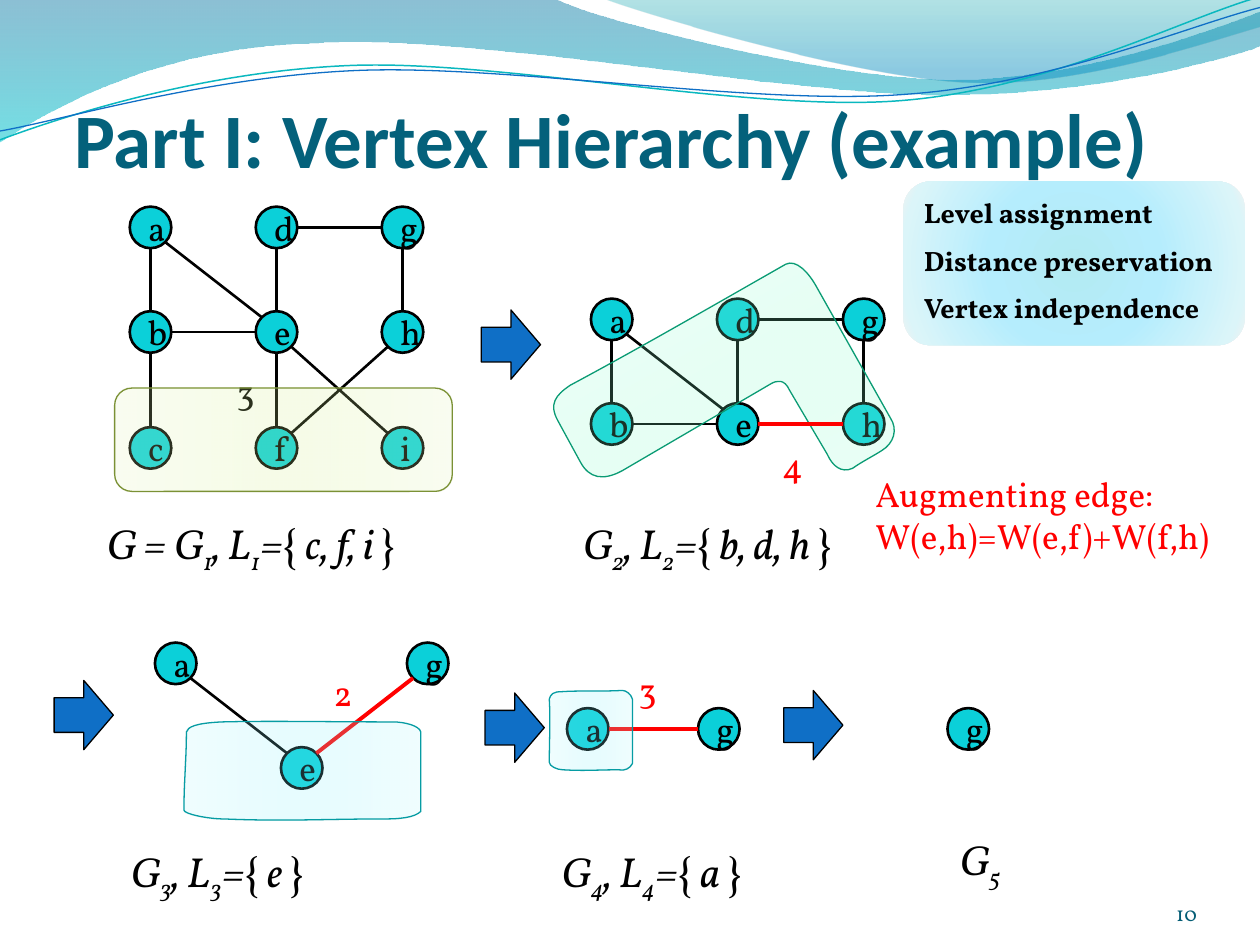
"""Build the vertex hierarchy example slide."""
import math

import pptx
import pptx.dml.color
import pptx.enum.shapes
import pptx.enum.text
import pptx.oxml
import pptx.oxml.ns
import pptx.util

Inches, Pt, qn = pptx.util.Inches, pptx.util.Pt, pptx.oxml.ns.qn
SHAPE = pptx.enum.shapes.MSO_SHAPE
ALIGN = pptx.enum.text.PP_ALIGN
ANCHOR = pptx.enum.text.MSO_ANCHOR

COLORS = {
    "title": "04617B", "number": "045D75", "node": "0BD0D9", "ink": "000000",
    "augmented": "FF0000", "arrow": "0F6FC6", "wave": "0AB8BF",
    "olive": "7B9135", "green": "0A9B74", "aqua": "069CA3",
}
BAND_TINTS = {
    "olive": ("E2F5BA", "D7F399", "D3F28E"),
    "green": ("B2FEDB", "8EFFCD", "82FFC9"),
    "aqua": ("B5F9FF", "93F7FF", "87F6FF"),
}
LEGEND_STOPS = [(0, "B3EAF2", 100), (45, "B5EDFD", 100), (91, "DBF5F9", 100), (100, "F2F2F2", 100)]
RADIUS = 0.165

WAVE_BACK = [(0, 0), (4.4, -0.01), (4.76, 0.17, 6.64, 0.63, 7.58, 0.63),
             (8.53, 0.63, 9.58, 0.26, 10, 0.09), (10.01, 0.36),
             (9.83, 0.44, 8.7, 0.76, 7.46, 0.75), (6.22, 0.75, 3.82, 0.28, 2.57, 0.34),
             (1.29, 0.36, 0.46, 0.83, -0.01, 1.13), (0, 0)]
WAVE_FRONT = [(4.79, -0.01), (5.09, 0.11, 6.82, 0.62, 7.69, 0.65),
              (8.56, 0.69, 9.61, 0.32, 10, 0.21), (10, 0), (4.79, -0.01)]
STRAND_UPPER = [(0, 1.11), (0.48, 0.93, 1.58, 0.57, 2.77, 0.52),
                (3.95, 0.47, 5.93, 0.89, 7.13, 0.8), (8.33, 0.71, 9.38, 0.15, 9.98, -0.02)]
STRAND_LOWER = [(0, 1.04), (0.47, 0.96, 1.64, 0.61, 2.83, 0.56),
                (4.03, 0.51, 5.97, 0.84, 7.17, 0.75), (8.36, 0.67, 9.41, 0.21, 10, 0.06)]
BAND_L2 = [(4.53, 3.06), (4.41, 3.14, 4.36, 3.21, 4.43, 3.34), (4.61, 3.67),
           (4.68, 3.8, 4.79, 3.82, 4.94, 3.74), (6.12, 3.05),
           (6.17, 3.02, 6.23, 3.01, 6.27, 3.1), (6.57, 3.61),
           (6.61, 3.7, 6.68, 3.76, 6.77, 3.72), (6.84, 3.67, 6.92, 3.63, 7, 3.58),
           (7.1, 3.52, 7.13, 3.41, 7.07, 3.32), (6.49, 2.29),
           (6.42, 2.16, 6.32, 2.06, 6.24, 2.1), (5.66, 2.43, 5.09, 2.76, 4.53, 3.06)]
BAND_L3 = [(1.48, 5.81), (1.48, 6.02, 1.46, 6.21, 1.46, 6.43),
           (1.46, 6.46, 1.65, 6.5, 1.78, 6.5), (2.27, 6.52, 2.56, 6.5, 3.05, 6.5),
           (3.17, 6.5, 3.29, 6.49, 3.34, 6.44), (3.34, 6.23, 3.34, 6.02, 3.34, 5.81),
           (3.33, 5.76, 3.21, 5.73, 3.12, 5.73), (2.61, 5.73, 2.15, 5.72, 1.76, 5.73),
           (1.55, 5.74, 1.49, 5.77, 1.48, 5.81)]
BAND_L4 = [(4.36, 5.55), (4.37, 5.72, 4.36, 5.88, 4.36, 6.05),
           (4.36, 6.08, 4.42, 6.11, 4.47, 6.11), (4.64, 6.12, 4.74, 6.11, 4.91, 6.11),
           (4.96, 6.12, 5, 6.1, 5.02, 6.06), (5.02, 5.89, 5.02, 5.72, 5.02, 5.55),
           (5.01, 5.51, 4.97, 5.48, 4.94, 5.48), (4.76, 5.49, 4.6, 5.48, 4.46, 5.49),
           (4.39, 5.49, 4.37, 5.51, 4.36, 5.55)]


def rgb(name):
    return pptx.dml.color.RGBColor.from_string(COLORS[name])


def xml(tag, body=""):
    return pptx.oxml.parse_xml(f"<a:{tag} {pptx.oxml.ns.nsdecls('a')}>{body}</a:{tag}>")


def set_fill(shape, color):
    shape.fill.solid()
    shape.fill.fore_color.rgb = rgb(color)


def set_line(shape, color, width):
    shape.line.color.rgb = rgb(color)
    shape.line.width = Pt(width)


def set_gradient(shape, stops, angle=None):
    marks = "".join(f'<a:gs pos="{at * 1000}"><a:srgbClr val="{color}">'
                    f'<a:alpha val="{opacity * 1000}"/></a:srgbClr></a:gs>'
                    for at, color, opacity in stops)
    way = (f'<a:lin ang="{angle * 60000}" scaled="0"/>' if angle is not None else
           '<a:path path="circle"><a:fillToRect l="50000" t="50000" r="50000" b="50000"/></a:path>')
    shape.fill.background()
    properties = shape._element.spPr
    blank = properties.find(qn("a:noFill"))
    properties.replace(blank, xml("gradFill", f"<a:gsLst>{marks}</a:gsLst>{way}"))


def style_band(shape, color):
    edge_tint, mid_tint, core_tint = BAND_TINTS[color]
    tints = (edge_tint, mid_tint, core_tint, core_tint, mid_tint, edge_tint)
    set_gradient(shape, [(at, c, 20) for at, c in zip((0, 30, 45, 55, 73, 100), tints)], 0)
    set_line(shape, color, 0.75)


def bend(outline, segments):
    corners = iter(list(outline._element.iter(qn("a:lnTo"))))
    for segment in segments[1:]:
        stretch = [next(corners) for _ in range(len(segment) // 2)]
        if len(stretch) == 3:
            curve = xml("cubicBezTo")
            stretch[0].addprevious(curve)
            for corner in stretch:
                curve.append(corner[0])
                corner.getparent().remove(corner)


def add_outline(slide, segments, closed=True, turn=0, pivot=(0, 0)):
    spin = math.radians(-turn)
    points = []
    for segment in segments:
        for x, y in zip(segment[::2], segment[1::2]):
            dx, dy = x - pivot[0], y - pivot[1]
            points.append((Inches(pivot[0] + dx * math.cos(spin) - dy * math.sin(spin)),
                           Inches(pivot[1] + dx * math.sin(spin) + dy * math.cos(spin))))
    builder = slide.shapes.build_freeform(*points[0])
    builder.add_line_segments(points[1:], close=closed)
    outline = builder.convert_to_shape()
    bend(outline, segments)
    outline.rotation = turn
    outline.shadow.inherit = False
    outline.fill.background()
    outline.line.fill.background()
    return outline


def add_shape(slide, kind, *box):
    shape = slide.shapes.add_shape(kind, *map(Inches, box))
    shape.shadow.inherit = False
    return shape


def style_paragraph(paragraph, size, color="ink", font="Vollkorn", align=ALIGN.LEFT):
    paragraph.alignment = align
    paragraph.font.size = Pt(size)
    paragraph.font.name = font
    paragraph.font.color.rgb = rgb(color)


def add_text(slide, lines, box, size, color="ink", font="Vollkorn", align=ALIGN.LEFT):
    frame = slide.shapes.add_textbox(*map(Inches, box)).text_frame
    frame.word_wrap = True
    frame.text = lines
    for paragraph in frame.paragraphs:
        style_paragraph(paragraph, size, color, font, align)
    return frame


def add_caption(slide, level, members, box, lead="G"):
    paragraph = add_text(slide, "", box, 24).paragraphs[0]
    pieces = [(lead, True, False), (level, True, True)]
    if members:
        pieces += [(", L", True, False), (level, True, True), ("=", True, False),
                   ("{ ", False, False), (members + " ", True, False), ("}", False, False)]
    for text, italic, lowered in pieces:
        run = paragraph.add_run()
        run.text = text
        run.font.italic = italic
        if lowered:
            run.font._element.set("baseline", "-25000")


def add_edge(slide, start, end, color="ink", width=1.5):
    eighth = math.pi / 4
    angle = round(math.atan2(end[1] - start[1], end[0] - start[0]) / eighth) * eighth
    dx, dy = RADIUS * math.cos(angle), RADIUS * math.sin(angle)
    ends = (start[0] + RADIUS + dx, start[1] + RADIUS + dy,
            end[0] + RADIUS - dx, end[1] + RADIUS - dy)
    edge = slide.shapes.add_connector(pptx.enum.shapes.MSO_CONNECTOR.STRAIGHT, *map(Inches, ends))
    set_line(edge, color, width)
    edge._element.spPr.append(xml("effectLst"))


def add_graph(slide, vertices, edges=""):
    for name, corner in vertices.items():
        vertex = add_shape(slide, SHAPE.OVAL, *corner, 2 * RADIUS, 2 * RADIUS)
        set_fill(vertex, "node")
        set_line(vertex, "ink", 1.5)
        vertex.text_frame.text = name
        vertex.text_frame.vertical_anchor = ANCHOR.MIDDLE
        style_paragraph(vertex.text_frame.paragraphs[0], 20, align=ALIGN.CENTER)
    for start, end in edges.split():
        add_edge(slide, vertices[start], vertices[end])


def add_arrow(slide, left, top):
    arrow = add_shape(slide, SHAPE.DOWN_ARROW, left, top, 0.55, 0.47)
    arrow.rotation = 270
    set_fill(arrow, "arrow")
    set_line(arrow, "ink", 0.75)


def add_backdrop(slide):
    set_gradient(add_outline(slide, WAVE_BACK), [(0, "0074A1", 45), (100, "00C6CF", 55)], 90)
    set_gradient(add_outline(slide, WAVE_FRONT), [(0, "00A1A9", 30), (80, "008BBF", 45)], 90)
    set_line(add_outline(slide, STRAND_UPPER, False, 357.3, (4.99, 0.58)), "wave", 0.85)
    set_line(add_outline(slide, STRAND_LOWER, False, 357.3, (5, 0.59)), "arrow", 0.75)


def add_legend(slide):
    legend = add_shape(slide, SHAPE.ROUNDED_RECTANGLE, 7.17, 1.44, 2.71, 1.3)
    set_gradient(legend, LEGEND_STOPS)
    legend.line.fill.background()
    legend.text_frame.vertical_anchor = ANCHOR.TOP
    legend.text_frame.text = "Level assignment\nDistance preservation\nVertex independence"
    for paragraph in legend.text_frame.paragraphs:
        style_paragraph(paragraph, 16, align=ALIGN.JUSTIFY)
        paragraph.font.bold = True
        paragraph.space_before = Pt(8)


def main():
    deck = pptx.Presentation()
    deck.slide_width, deck.slide_height = Inches(10), Inches(7.5)
    slide = deck.slides.add_slide(deck.slide_layouts[6])
    add_backdrop(slide)
    title = add_text(slide, "Part I: Vertex Hierarchy (example)", (0.59, 0.21, 9, 1.25),
                     44, "title", "Calibri")
    title.paragraphs[0].font.bold = True
    title.vertical_anchor = ANCHOR.BOTTOM
    title.margin_left = title.margin_right = title.margin_bottom = 0

    first = {name: (1.03 + i // 3, (1.64, 2.47, 3.39)[i % 3]) for i, name in enumerate("abcdefghi")}
    add_graph(slide, first, "ab bc de ef gd ei gh hf ea eb")
    add_text(slide, "3", (1.78, 2.89, 0.3, 0.44), 20)
    style_band(add_shape(slide, SHAPE.ROUNDED_RECTANGLE, 0.91, 3.08, 2.68, 0.82), "olive")
    add_caption(slide, "1", "c, f, i", (0.75, 4.06, 2.83, 0.5), "G = G")

    add_arrow(slide, 3.78, 2.5)
    second = {name: (4.69 + i // 2, (2.37, 3.2)[i % 2]) for i, name in enumerate("abdegh")}
    add_graph(slide, second, "ab de gd gh ea eb")
    style_band(add_outline(slide, BAND_L2, True, 240.3, (5.75, 3.33)), "green")
    add_caption(slide, "2", "b, d, h", (4.53, 4.06, 2.83, 0.5))

    add_arrow(slide, 0.39, 5.44)
    third = {"a": (1.23, 5.1), "e": (2.23, 5.93), "g": (3.23, 5.1)}
    add_graph(slide, third, "ea")
    add_text(slide, "2", (2.55, 5.28, 0.48, 0.44), 20, "augmented")
    add_edge(slide, third["g"], third["e"], "augmented", 2.25)
    add_text(slide, "4", (6.11, 3.47, 0.48, 0.44), 20, "augmented")
    add_edge(slide, second["h"], second["e"], "augmented", 2.25)
    add_text(slide, "Augmenting edge:\nW(e,h)=W(e,f)+W(f,h)", (6.85, 3.7, 3.03, 0.77),
             20, "augmented")
    style_band(add_outline(slide, BAND_L3), "aqua")
    add_caption(slide, "3", "e", (0.94, 6.66, 2.83, 0.5))

    add_arrow(slide, 3.81, 5.54)
    fourth = {"a": (4.5, 5.62), "g": (5.54, 5.62)}
    add_graph(slide, fourth)
    add_text(slide, "3", (4.97, 5.26, 0.48, 0.44), 20, "augmented")
    add_edge(slide, fourth["g"], fourth["a"], "augmented", 2.25)
    add_caption(slide, "4", "a", (4.36, 6.66, 2.02, 0.5))
    style_band(add_outline(slide, BAND_L4), "aqua")

    add_arrow(slide, 6.18, 5.52)
    add_graph(slide, {"g": (7.52, 5.62)})
    add_caption(slide, "5", "", (7.52, 6.57, 0.83, 0.5))
    number = add_text(slide, "10", (8.67, 6.95, 0.83, 0.4), 12, "number", align=ALIGN.RIGHT)
    number.vertical_anchor = ANCHOR.BOTTOM
    number.margin_left = number.margin_top = number.margin_right = number.margin_bottom = 0
    add_legend(slide)
    deck.save("out.pptx")


if __name__ == "__main__":
    main()
